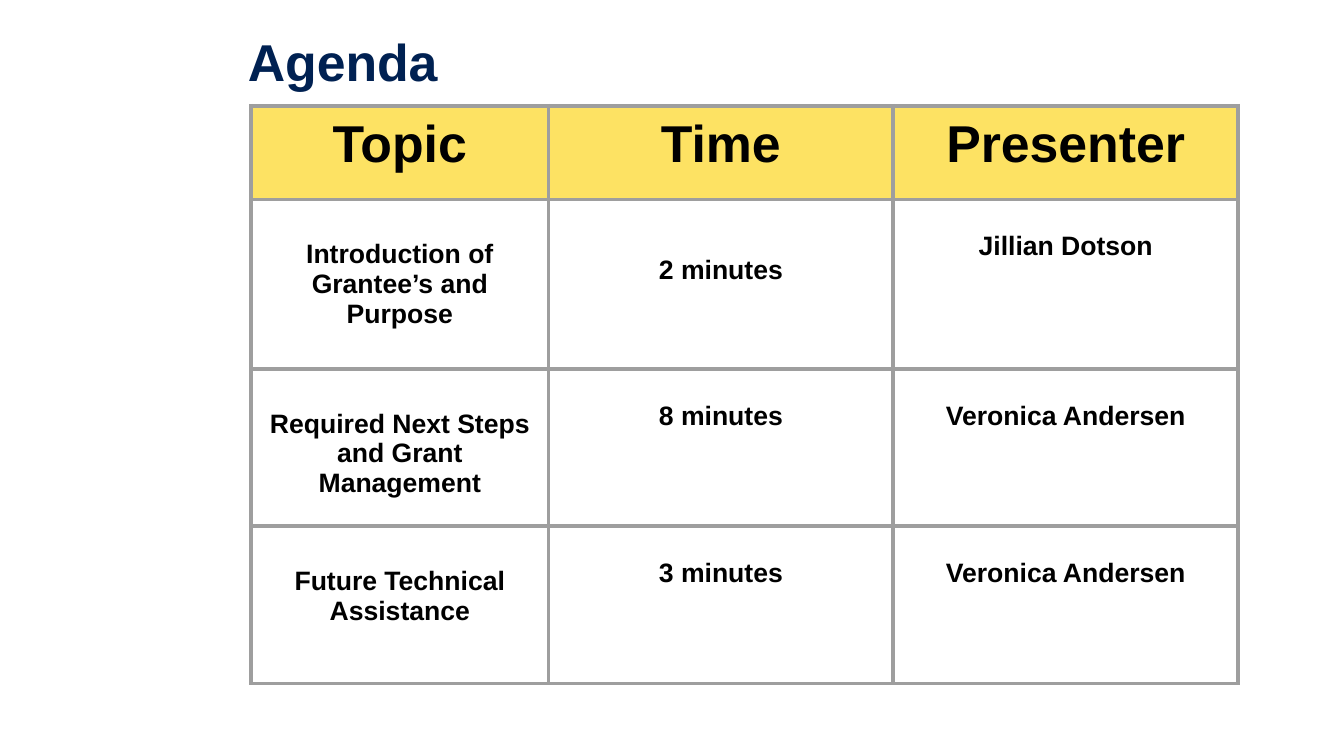
"""Build the meeting agenda slide."""
from lxml.etree import SubElement
from pptx import Presentation
from pptx.dml.color import RGBColor
from pptx.enum.text import MSO_ANCHOR, PP_ALIGN
from pptx.oxml.ns import qn
from pptx.util import Inches, Pt

NAVY = RGBColor(0x00, 0x21, 0x52)
BLACK = RGBColor(0x00, 0x00, 0x00)
YELLOW = RGBColor(0xFD, 0xE2, 0x63)
GRAY = RGBColor(0x9E, 0x9E, 0x9E)

FONT = "Arial"
HEADING_SIZE = 37
BODY_SIZE = 19
PADDING = 0.1
TOPIC_TOP = 0.4
DETAIL_TOP = 0.32
LOWER_DETAIL_TOP = 0.55

COLUMN_WIDTHS = [2.95, 3.42, 3.42]
ROW_HEIGHTS = [0.93, 1.68, 1.56, 1.56]
HEADINGS = ["Topic", "Time", "Presenter"]
SESSIONS = [
    ["Introduction of Grantee’s and Purpose", "2 minutes", "Jillian Dotson"],
    ["Required Next Steps and Grant Management", "8 minutes", "Veronica Andersen"],
    ["Future Technical Assistance", "3 minutes", "Veronica Andersen"],
]
SESSION_TOPS = [
    [TOPIC_TOP, LOWER_DETAIL_TOP, DETAIL_TOP],
    [TOPIC_TOP, DETAIL_TOP, DETAIL_TOP],
    [TOPIC_TOP, DETAIL_TOP, DETAIL_TOP],
]


def write_text(frame, text, size, color):
    """Write one bold paragraph and return it."""
    frame.word_wrap = True
    paragraph = frame.paragraphs[0]
    paragraph.text = text
    paragraph.font.name = FONT
    paragraph.font.size = Pt(size)
    paragraph.font.bold = True
    paragraph.font.color.rgb = color
    return paragraph


def add_title(page, text):
    """Add the slide title."""
    box = page.shapes.add_textbox(Inches(2.36), Inches(0), Inches(10.34), Inches(1.28))
    box.text_frame.vertical_anchor = MSO_ANCHOR.MIDDLE
    write_text(box.text_frame, text, HEADING_SIZE, NAVY).line_spacing = 0.9


def set_borders(cell):
    """Draw a gray line on all four sides of a cell."""
    properties = cell._tc.get_or_add_tcPr()
    for side in ("a:lnL", "a:lnR", "a:lnT", "a:lnB"):
        line = SubElement(properties, qn(side), w=str(Pt(3)))
        fill = SubElement(line, qn("a:solidFill"))
        SubElement(fill, qn("a:srgbClr"), val=str(GRAY))


def fill_cell(cell, text, size, top, background=None):
    """Set the text, margins, borders and fill of a cell."""
    cell.margin_left = cell.margin_right = cell.margin_bottom = Inches(PADDING)
    cell.margin_top = Inches(top)
    write_text(cell.text_frame, text, size, BLACK).alignment = PP_ALIGN.CENTER
    set_borders(cell)
    if background is None:
        cell.fill.background()
    else:
        cell.fill.solid()
        cell.fill.fore_color.rgb = background


def add_agenda(page):
    """Add the table of topics, times and presenters."""
    table = page.shapes.add_table(
        len(ROW_HEIGHTS), len(COLUMN_WIDTHS), Inches(2.49), Inches(1.05),
        Inches(sum(COLUMN_WIDTHS)), Inches(sum(ROW_HEIGHTS)),
    ).table
    table.horz_banding = False
    for column, width in zip(table.columns, COLUMN_WIDTHS):
        column.width = Inches(width)
    for row, height in zip(table.rows, ROW_HEIGHTS):
        row.height = Inches(height)
    for column, heading in enumerate(HEADINGS):
        fill_cell(table.cell(0, column), heading, HEADING_SIZE, PADDING, YELLOW)
    for row, (session, tops) in enumerate(zip(SESSIONS, SESSION_TOPS), start=1):
        for column, (text, top) in enumerate(zip(session, tops)):
            fill_cell(table.cell(row, column), text, BODY_SIZE, top)


def main():
    """Create and save the deck."""
    deck = Presentation()
    deck.slide_width = Inches(13.33)
    deck.slide_height = Inches(7.5)
    page = deck.slides.add_slide(deck.slide_layouts[6])
    add_title(page, "Agenda")
    add_agenda(page)
    deck.save("out.pptx")


if __name__ == "__main__":
    main()
